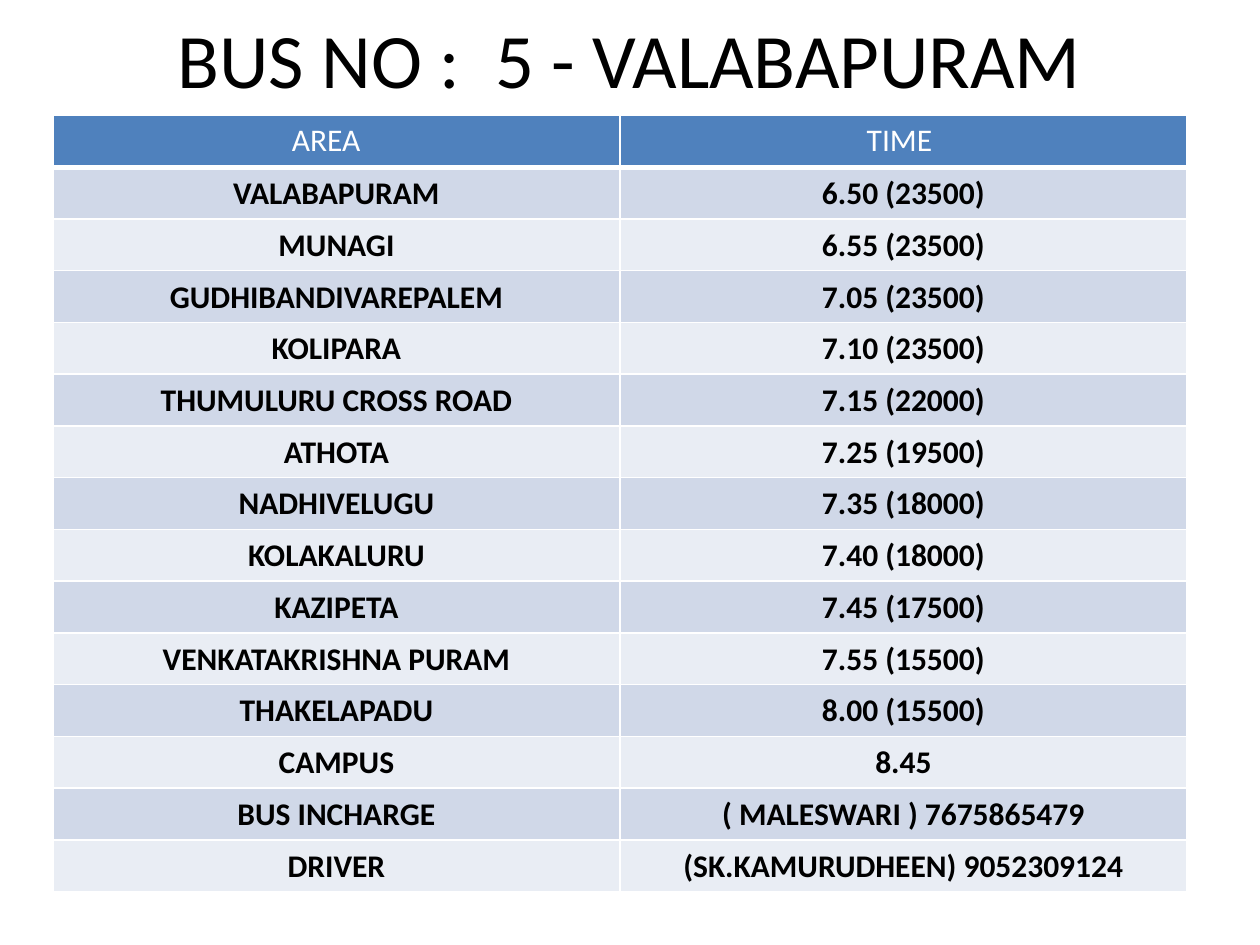
from dataclasses import dataclass

from lxml.etree import SubElement
from pptx import Presentation
from pptx.dml.color import RGBColor as Rgb
from pptx.enum.text import MSO_ANCHOR as Anchor, PP_ALIGN as Align
from pptx.oxml.ns import qn
from pptx.util import Pt


@dataclass(frozen=True)
class Theme:
    font: str = "Calibri"
    title_size: int = 44
    table_size: int = 18
    ink: str = "000000"
    paper: str = "FFFFFF"
    header: str = "4F81BD"
    bands: tuple = ("D0D8E8", "E9EDF4")
    rule: int = 1
    header_rule: int = 3


THEME = Theme()
TITLE = "BUS NO :  5 - VALABAPURAM"
HEADINGS = (("AREA", 136.6), ("TIME", 141))
STOPS = (
    ("VALABAPURAM", "6.50 (23500)"),
    ("MUNAGI", "6.55 (23500)"),
    ("GUDHIBANDIVAREPALEM", "7.05 (23500)"),
    ("KOLIPARA", "7.10 (23500)"),
    ("THUMULURU CROSS ROAD", "7.15 (22000)"),
    ("ATHOTA", "7.25 (19500)"),
    ("NADHIVELUGU", "7.35 (18000)"),
    ("KOLAKALURU", "7.40 (18000)"),
    ("KAZIPETA", "7.45 (17500)"),
    ("VENKATAKRISHNA PURAM", "7.55 (15500)"),
    ("THAKELAPADU", "8.00 (15500)"),
    ("CAMPUS", "8.45"),
    ("BUS INCHARGE", "( MALESWARI ) 7675865479"),
    ("DRIVER", "(SK.KAMURUDHEEN) 9052309124"),
)
COLUMN_WIDTH = 324
ROW_HEIGHT = 29.57


def write(frame, wording, size, color, align, bold=False):
    frame.text = wording
    paragraph = frame.paragraphs[0]
    paragraph.alignment = align
    font = paragraph.runs[0].font
    font.name, font.size, font.bold = THEME.font, Pt(size), bold
    font.color.rgb = Rgb.from_string(color)


def rule_cell(cell, top, bottom):
    properties = cell._tc.get_or_add_tcPr()
    widths = {"lnL": THEME.rule, "lnR": THEME.rule, "lnT": top, "lnB": bottom}
    for side, width in widths.items():
        line = SubElement(properties, qn(f"a:{side}"), w=str(Pt(width)))
        fill = SubElement(line, qn("a:solidFill"))
        SubElement(fill, qn("a:srgbClr"), val=THEME.paper)


def paint_cell(cell, color):
    cell.fill.solid()
    cell.fill.fore_color.rgb = Rgb.from_string(color)


def add_title(slide):
    title = slide.shapes.add_textbox(Pt(54), Pt(0), Pt(612), Pt(66))
    frame = title.text_frame
    frame.word_wrap = True
    frame.vertical_anchor = Anchor.MIDDLE
    write(frame, TITLE, THEME.title_size, THEME.ink, Align.CENTER)


def fill_heading(cell, heading, indent):
    rule_cell(cell, THEME.rule, THEME.header_rule)
    paint_cell(cell, THEME.header)
    cell.margin_left = Pt(indent)
    write(cell.text_frame, heading, THEME.table_size, THEME.paper, Align.LEFT)


def fill_stop(cell, entry, index):
    rule_cell(cell, THEME.rule if index else THEME.header_rule, THEME.rule)
    paint_cell(cell, THEME.bands[index % 2])
    cell.margin_left = cell.margin_right = cell.margin_top = Pt(0.72)
    cell.margin_bottom = Pt(0)
    cell.vertical_anchor = Anchor.MIDDLE
    write(cell.text_frame, entry, THEME.table_size, THEME.ink, Align.CENTER, bold=True)


def add_timetable(slide):
    row_count, column_count = len(STOPS) + 1, len(HEADINGS)
    timetable = slide.shapes.add_table(
        row_count, column_count, Pt(30.24), Pt(66),
        Pt(COLUMN_WIDTH * column_count), Pt(ROW_HEIGHT * row_count),
    ).table
    for column in timetable.columns:
        column.width = Pt(COLUMN_WIDTH)
    for row in timetable.rows:
        row.height = Pt(ROW_HEIGHT)
    for column, (heading, indent) in enumerate(HEADINGS):
        fill_heading(timetable.cell(0, column), heading, indent)
    for index, stop in enumerate(STOPS):
        for column, entry in enumerate(stop):
            fill_stop(timetable.cell(index + 1, column), entry, index)


def main():
    deck = Presentation()
    deck.slide_width, deck.slide_height = Pt(720), Pt(540)
    slide = deck.slides.add_slide(deck.slide_layouts[6])
    add_title(slide)
    add_timetable(slide)
    deck.save("out.pptx")


if __name__ == "__main__":
    main()
